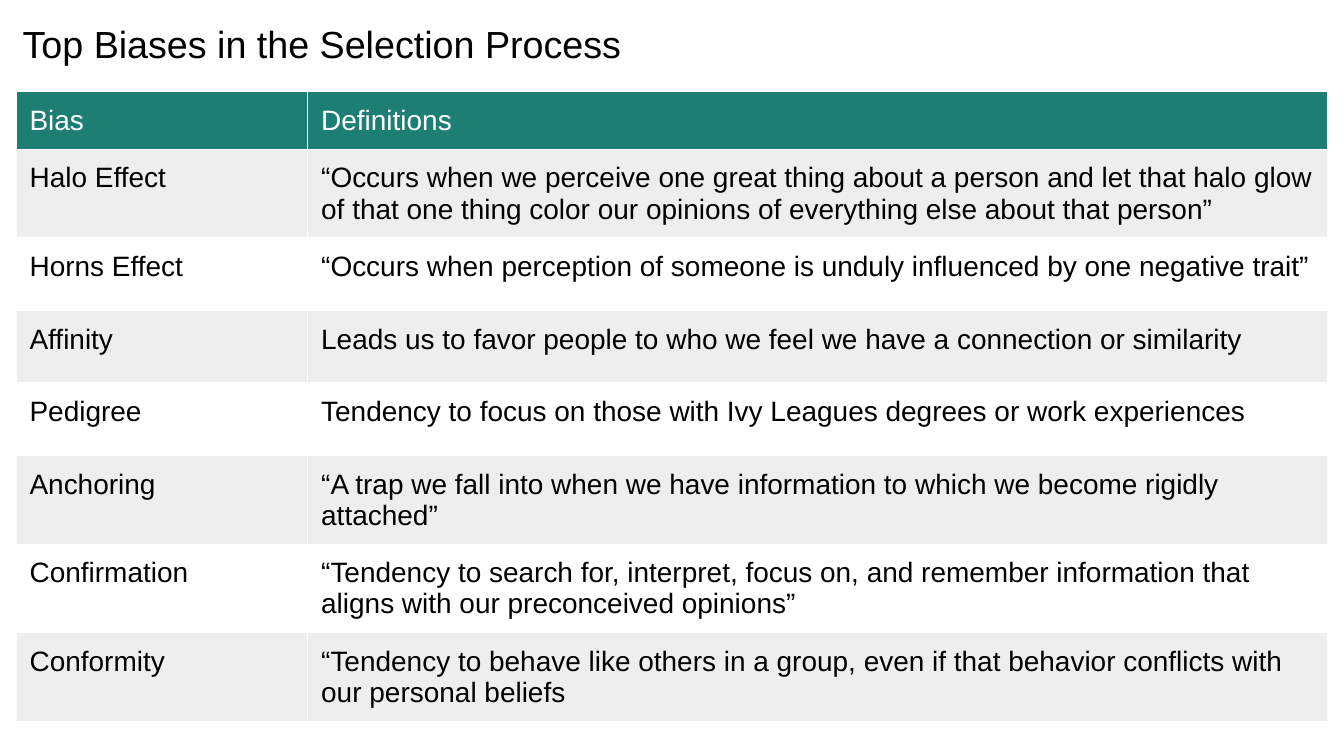
import pptx
import pptx.dml.color
import pptx.enum.text
import pptx.oxml
import pptx.oxml.ns
import pptx.util

Inches = pptx.util.Inches
Pt = pptx.util.Pt

# Content
TITLE = "Top Biases in the Selection Process"
ROWS = [
    ("Bias", "Definitions"),
    ("Halo Effect", "“Occurs when we perceive one great thing about a person and let that halo glow "
                    "of that one thing color our opinions of everything else about that person”"),
    ("Horns Effect", "“Occurs when perception of someone is unduly influenced by one negative trait”"),
    ("Affinity", "Leads us to favor people to who we feel we have a connection or similarity"),
    ("Pedigree", "Tendency to focus on those with Ivy Leagues degrees or work experiences"),
    ("Anchoring", "“A trap we fall into when we have information to which we become rigidly attached”"),
    ("Confirmation", "“Tendency to search for, interpret, focus on, and remember information that "
                     "aligns with our preconceived opinions”"),
    ("Conformity", "“Tendency to behave like others in a group, even if that behavior conflicts with "
                   "our personal beliefs"),
]

# Format
COLORS = {"text": "000000", "header_text": "FFFFFF", "header": "1D7E74",
          "band": "EEEEEE", "border": "FFFFFF"}
COLUMN_WIDTHS = (2.17, 7.59)
HEADER_HEIGHT, ONE_LINE_HEIGHT, TWO_LINE_HEIGHT = 0.43, 0.54, 0.66
LINE_LENGTH = 78  # characters that fit on one line of a definition
MARGINS = {"margin_left": 0.1, "margin_right": 0.1, "margin_top": 0.1, "margin_bottom": 0.05}


def set_margins(target, margins):
    for name, value in margins.items():
        setattr(target, name, Inches(value))


def write(text_frame, text, size, color):
    run = text_frame.paragraphs[0].add_run()
    run.text = text
    for name, value in {"name": "Arial", "size": Pt(size), "bold": False}.items():
        setattr(run.font, name, value)
    run.font.color.rgb = pptx.dml.color.RGBColor.from_string(COLORS[color])


def fill_cell(cell, color):
    # Borders come before the fill in the cell properties
    properties = cell._tc.get_or_add_tcPr()
    for side in ("lnL", "lnR", "lnT", "lnB"):
        properties.append(pptx.oxml.parse_xml(
            f'<a:{side} {pptx.oxml.ns.nsdecls("a")} w="{Pt(0.75)}"><a:solidFill>'
            f'<a:srgbClr val="{COLORS["border"]}"/></a:solidFill></a:{side}>'))
    if color:
        cell.fill.solid()
        cell.fill.fore_color.rgb = pptx.dml.color.RGBColor.from_string(COLORS[color])
    else:
        cell.fill.background()


# Widescreen slide
presentation = pptx.Presentation()
presentation.slide_width = Inches(10)
presentation.slide_height = presentation.slide_width * 9 // 16
slide = presentation.slides.add_slide(presentation.slide_layouts[6])

# Title
title = slide.shapes.add_textbox(Inches(0.07), Inches(0.05), Inches(9.32), Inches(0.63))
title.text_frame.word_wrap = True
title.text_frame.vertical_anchor = pptx.enum.text.MSO_ANCHOR.MIDDLE
set_margins(title.text_frame, {**MARGINS, "margin_bottom": 0.18})
write(title.text_frame, TITLE, 20.2, "text")

# Table of biases
heights = [HEADER_HEIGHT] + [
    TWO_LINE_HEIGHT if len(definition) > LINE_LENGTH else ONE_LINE_HEIGHT
    for _, definition in ROWS[1:]]
table = slide.shapes.add_table(
    len(ROWS), len(COLUMN_WIDTHS), Inches(0.12), Inches(0.68),
    Inches(sum(COLUMN_WIDTHS)), Inches(sum(heights))).table
table.horz_banding = False
for column, width in zip(table.columns, COLUMN_WIDTHS):
    column.width = Inches(width)

for row_index, (row, height) in enumerate(zip(ROWS, heights)):
    table.rows[row_index].height = Inches(height)
    is_header = row_index == 0
    fill = "header" if is_header else "band" if row_index % 2 else None
    for column_index, text in enumerate(row):
        cell = table.cell(row_index, column_index)
        set_margins(cell, MARGINS)
        fill_cell(cell, fill)
        write(cell.text_frame, text, 15, "header_text" if is_header else "text")

presentation.save("out.pptx")
